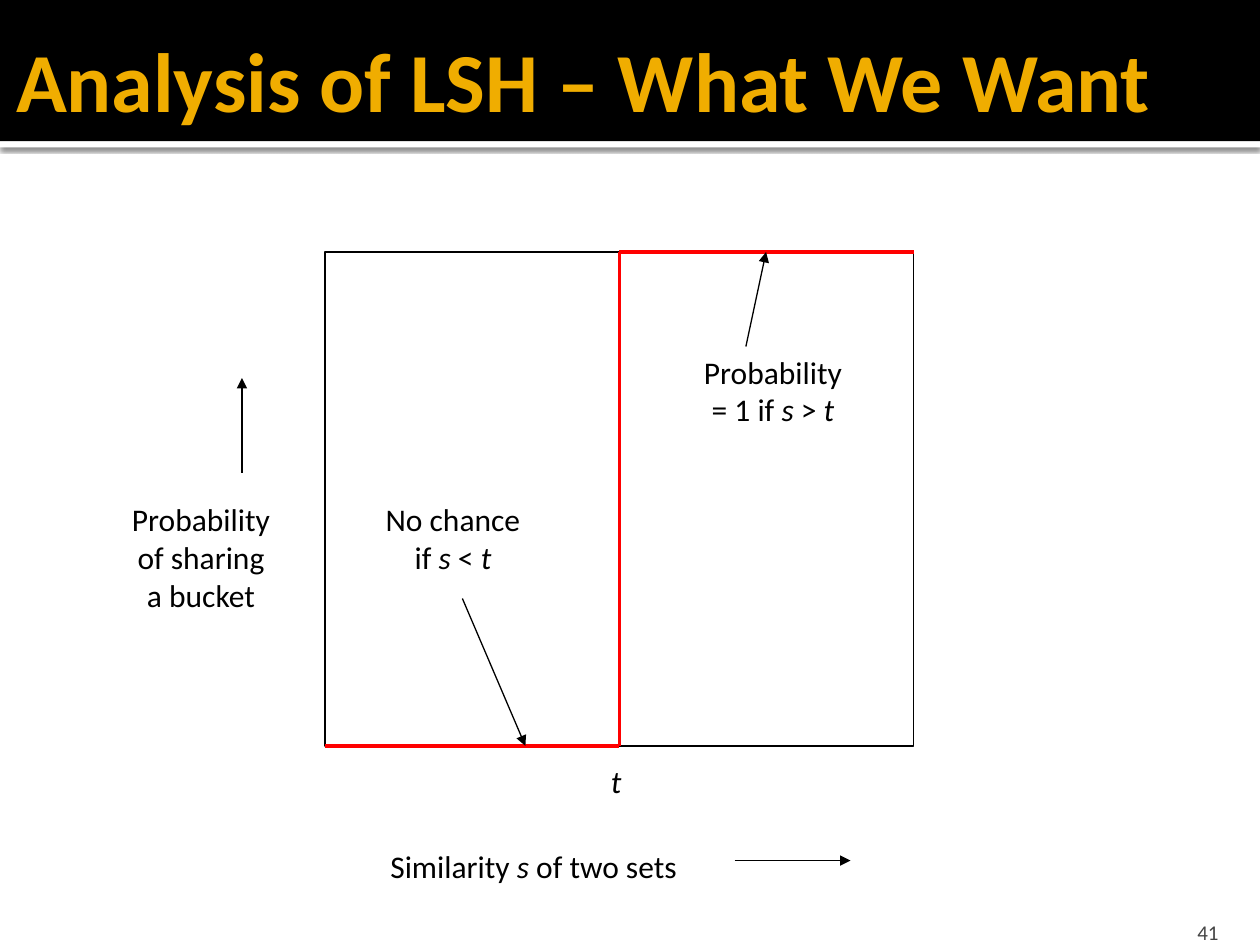
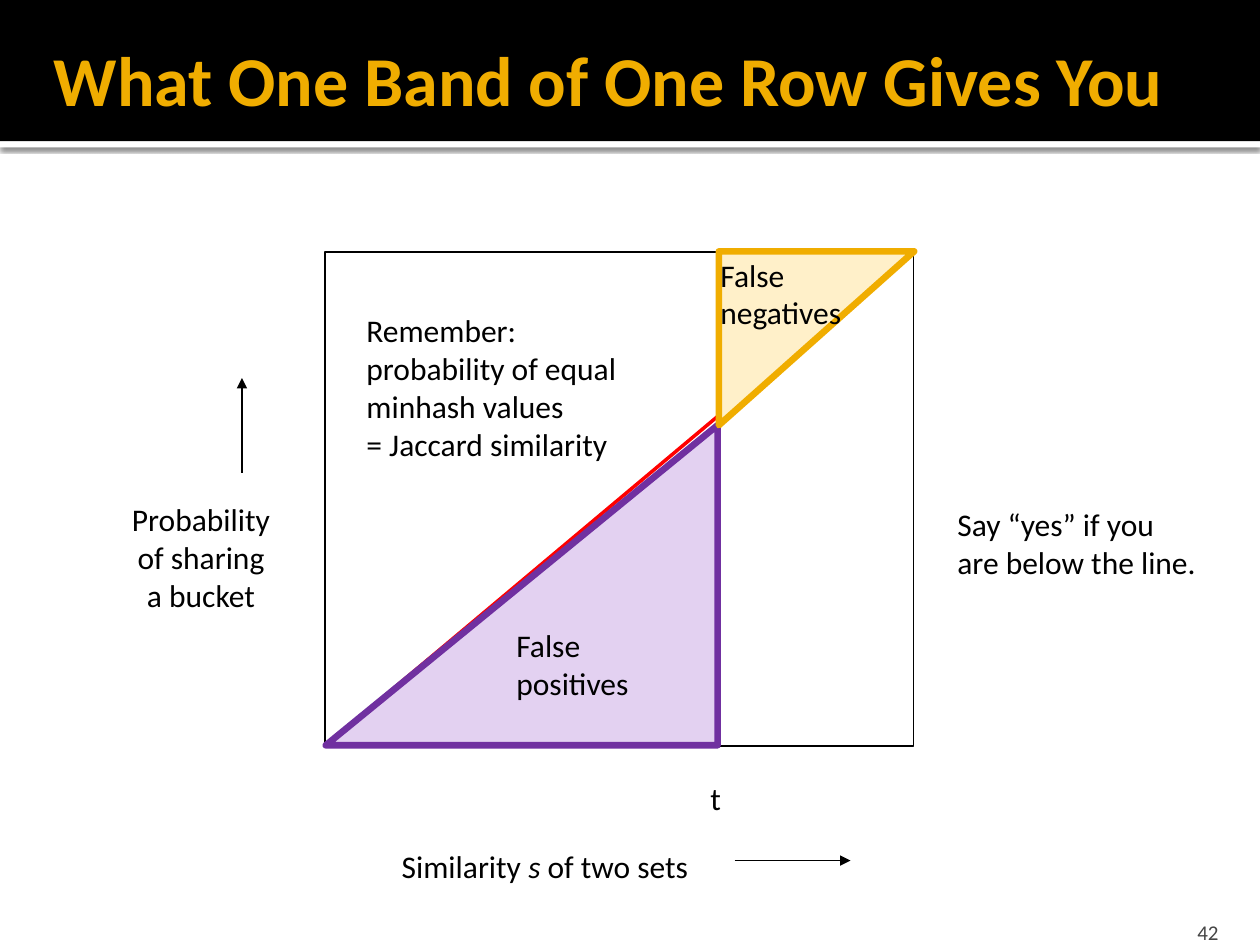
from dataclasses import dataclass

from lxml.etree import SubElement
from pptx import Presentation
from pptx.dml.color import RGBColor
from pptx.enum.shapes import MSO_CONNECTOR, MSO_SHAPE
from pptx.enum.text import MSO_ANCHOR, MSO_AUTO_SIZE, PP_ALIGN
from pptx.oxml.ns import qn
from pptx.util import Inches, Pt


@dataclass(frozen=True)
class Theme:
    font: str = "Calibri"
    black: str = "000000"
    white: str = "FFFFFF"
    gold: str = "F0AD00"
    cream: str = "FFF0C9"
    purple: str = "7030A0"
    lilac: str = "E3D1F1"
    red: str = "FF0000"
    gray: str = "454545"
    body: int = 18
    small: int = 12
    thin: float = 0.75
    curve: float = 2
    thick: float = 3.78


THEME = Theme()
LEFT, TOP, WIDE, HIGH = 2.58, 2, 4.67, 3.92
RIGHT, BASE = LEFT + WIDE, TOP + HIGH
MID = LEFT + WIDE / 2


def rgb(code):
    return RGBColor.from_string(code)


class Deck:
    def __init__(self, theme):
        self.theme = theme
        self.prs = Presentation()
        self.prs.slide_width, self.prs.slide_height = Inches(10), Inches(7.5)
        self.slide = None

    def start(self, title, size, left, width, number):
        """Add a slide with its title band and page number."""
        t = self.theme
        self.slide = self.prs.slides.add_slide(self.prs.slide_layouts[6])
        strip = self.shape((0, 1.12, 10, 0.05), fill=t.white)
        self.shade(strip)
        self.shape((0, 0, 10, 1.12), fill=t.black)
        self.text((8.97, 7.2, 0.8, 0.3), number, size=t.small, color=t.gray,
                  align=PP_ALIGN.RIGHT, anchor=MSO_ANCHOR.BOTTOM, wrap=True,
                  grow=False, pads=(0.1, 0.05, 0.1, 0))
        self.text((left, 0, width, 1.25), title, size=size, color=t.gold,
                  bold=True, anchor=MSO_ANCHOR.MIDDLE, wrap=True, grow=False,
                  pads=(0.1, 0.05, 0.05, 0.05))

    def shape(self, place, kind=MSO_SHAPE.RECTANGLE, fill=None, line=None,
              width=0.75, turn=0):
        item = self.slide.shapes.add_shape(kind, *map(Inches, place))
        item.shadow.inherit = False
        item.rotation = turn
        if fill:
            item.fill.solid()
            item.fill.fore_color.rgb = rgb(fill)
        else:
            item.fill.background()
        if line:
            item.line.color.rgb = rgb(line)
            item.line.width = Pt(width)
        else:
            item.line.fill.background()
        return item

    def shade(self, item):
        """Give the shape a soft shadow straight below it."""
        effects = item.element.spPr.find(qn("a:effectLst"))
        outer = SubElement(effects, qn("a:outerShdw"), blurRad=str(Pt(2.5)),
                           dist=str(Pt(0.8)), dir="5400000", algn="tl",
                           rotWithShape="0")
        color = SubElement(outer, qn("a:srgbClr"), val=self.theme.black)
        SubElement(color, qn("a:alpha"), val="60000")

    def text(self, place, words, size=None, color=None, bold=False,
             align=PP_ALIGN.LEFT, anchor=MSO_ANCHOR.TOP, wrap=False, grow=True,
             pads=(0.1, 0.05, 0.1, 0.05)):
        """Write one paragraph per line; *stars* mark italics."""
        t = self.theme
        frame = self.slide.shapes.add_textbox(*map(Inches, place)).text_frame
        frame.word_wrap = wrap
        frame.auto_size = (MSO_AUTO_SIZE.SHAPE_TO_FIT_TEXT if grow
                           else MSO_AUTO_SIZE.NONE)
        frame.vertical_anchor = anchor
        (frame.margin_left, frame.margin_top,
         frame.margin_right, frame.margin_bottom) = map(Inches, pads)
        for i, row in enumerate(words.split("\n")):
            para = frame.add_paragraph() if i else frame.paragraphs[0]
            para.alignment = align
            font = para.font
            font.name, font.size, font.bold = t.font, Pt(size or t.body), bold
            font.color.rgb = rgb(color or t.black)
            for j, part in enumerate(row.split("*")):
                if part:
                    run = para.add_run()
                    run.text = part
                    if j % 2:
                        run.font.italic = True

    def line(self, start, end, color=None, width=None, arrow=False):
        t = self.theme
        item = self.slide.shapes.add_connector(
            MSO_CONNECTOR.STRAIGHT, *map(Inches, (*start, *end)))
        item.line.color.rgb = rgb(color or t.black)
        item.line.width = Pt(width or t.thin)
        if arrow:
            SubElement(item.line._get_or_add_ln(), qn("a:tailEnd"),
                       type="triangle")
        SubElement(item.element.spPr, qn("a:effectLst"))
        return item

    def arrow(self, start, end):
        self.line(start, end, arrow=True)

    def curve(self, start, end):
        return self.line(start, end, self.theme.red, self.theme.curve)

    def plot(self, left):
        """Draw the plot frame and both axis labels with their arrows."""
        frame = self.shape((LEFT, TOP, WIDE, HIGH), line=self.theme.black)
        self.text((left, 6.67, 2.77, 0.4), "Similarity *s* of two sets",
                  align=PP_ALIGN.CENTER)
        self.text((0.92, 3.92, 1.35, 1), "Probability\nof sharing\na bucket",
                  align=PP_ALIGN.CENTER)
        self.arrow((5.83, 6.83), (6.75, 6.83))
        self.arrow((1.92, 3.75), (1.92, 3))
        return frame

    def wedge(self, place, turn, fill, line):
        self.shape(place, MSO_SHAPE.RIGHT_TRIANGLE, fill, line,
                   self.theme.thick, turn)


def ideal(deck):
    deck.start("Analysis of LSH – What We Want", 48, 0.03, 10, "41")
    frame = deck.plot(2.85)
    low = deck.curve((LEFT, BASE), (MID, BASE))
    low.end_connect(frame, 2)
    deck.text((4.75, 6, 0.28, 0.4), "*t*", align=PP_ALIGN.CENTER)
    step = deck.curve((MID, BASE), (MID, TOP))
    step.begin_connect(frame, 2)
    step.end_connect(frame, 0)
    high = deck.curve((MID, TOP), (RIGHT, TOP))
    high.begin_connect(frame, 0)
    deck.text((2.92, 3.92, 1.35, 0.7), "No chance\nif *s* < *t*",
              align=PP_ALIGN.CENTER)
    deck.arrow((3.67, 4.75), (4.17, BASE))
    deck.text((5.42, 2.75, 1.43, 0.7), "Probability\n= 1 if *s* > *t*",
              align=PP_ALIGN.CENTER)
    deck.arrow((5.92, 2.75), (6.08, TOP))


def single(deck):
    t = deck.theme
    deck.start("What One Band of One Row Gives You", 40, 0.33, 9.25, "42")
    deck.plot(2.94)
    deck.curve((LEFT, BASE), (RIGHT, TOP))
    deck.text((2.81, 2.42, 2.22, 1.31), "Remember:\nprobability of equal\n"
              "minhash values\n= Jaccard similarity")
    deck.line((5.7, TOP), (5.7, BASE), width=2.25)
    deck.text((5.54, 6.13, 0.29, 0.4), "t")
    deck.wedge((2.87, 3.09, 2.54, 3.11), 270, t.lilac, t.purple)
    deck.text((4, 4.92, 1.17, 0.71), "False\npositives", wrap=True)
    deck.wedge((5.79, 1.91, 1.38, 1.55), 90, t.cream, t.gold)
    deck.text((5.62, 1.98, 1.33, 0.71), "False\nnegatives", wrap=True)
    deck.text((7.5, 3.96, 2.11, 0.71), "Say “yes” if you\nare below the line.")


def main():
    deck = Deck(THEME)
    ideal(deck)
    single(deck)
    deck.prs.save("out.pptx")


if __name__ == "__main__":
    main()
